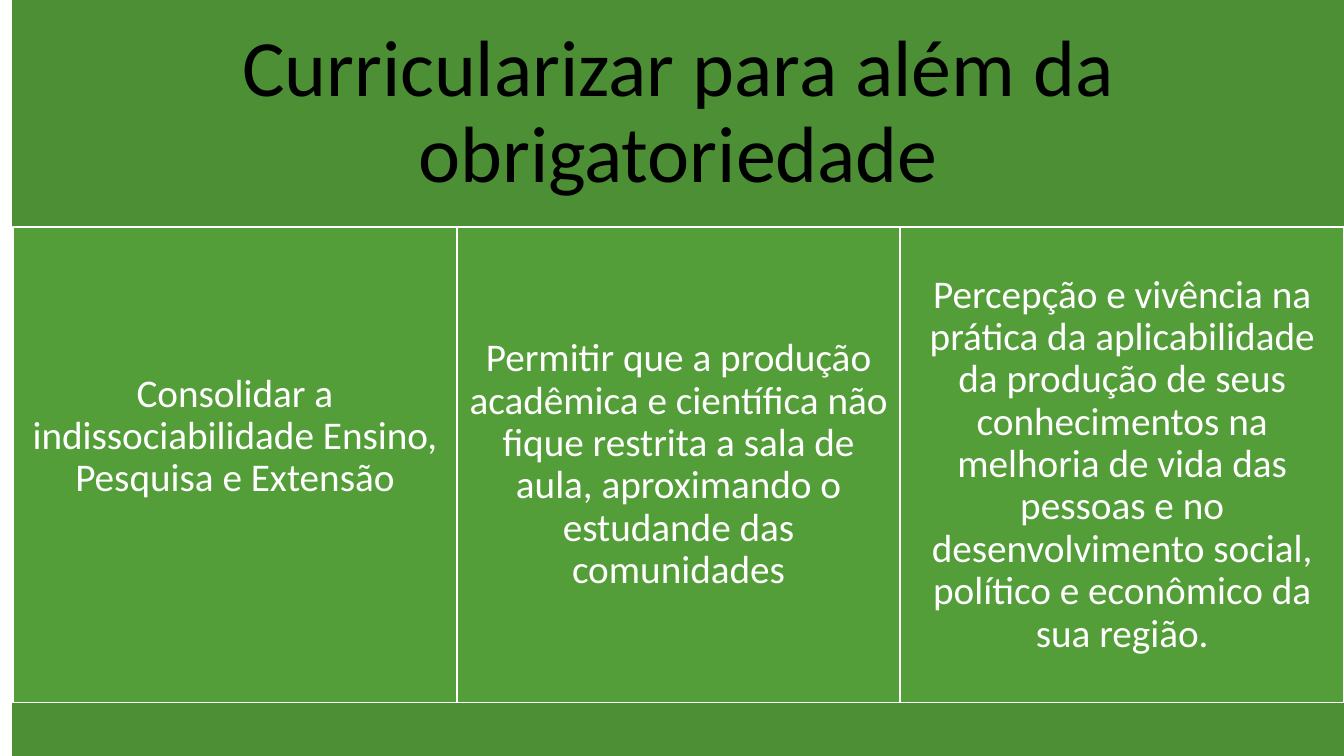
from pptx import Presentation, util as u
from pptx.dml.color import RGBColor
from pptx.enum import shapes, text

DARK_GREEN = RGBColor(0x4C, 0x8F, 0x34)
GREEN = RGBColor(0x54, 0x9E, 0x39)
WHITE = RGBColor(0xFF, 0xFF, 0xFF)
BLACK = RGBColor(0, 0, 0)

WIDTH, HEIGHT = 13.33, 7.5
LEFT = 0.12
BAND_WIDTH = WIDTH - LEFT
HEADER_HEIGHT = 0.3 * HEIGHT
COLUMN_HEIGHT = 0.63 * HEIGHT
FOOTER_TOP = HEADER_HEIGHT + COLUMN_HEIGHT

TITLE = "Curricularizar para além da obrigatoriedade"
COLUMNS = [
    ("Consolidar a indissociabilidade Ensino, Pesquisa e Extensão", 0.56),
    ("Permitir que a produção acadêmica e científica não fique restrita a sala de "
     "aula, aproximando o estudande das comunidades", 0),
    ("Percepção e vivência na prática da aplicabilidade da produção de seus "
     "conhecimentos na melhoria de vida das pessoas e no desenvolvimento social, "
     "político e econômico da sua região.", 0),
]


def write(box, words, size, color, margin, lift=0):
    """Fill a box with one centred paragraph, raised by half the lift."""
    frame = box.text_frame
    frame.word_wrap = True
    frame.auto_size = text.MSO_AUTO_SIZE.NONE
    frame.vertical_anchor = text.MSO_ANCHOR.MIDDLE
    frame.margin_left = frame.margin_right = frame.margin_top = u.Inches(margin)
    frame.margin_bottom = u.Inches(margin + lift)
    para = frame.paragraphs[0]
    para.alignment = text.PP_ALIGN.CENTER
    para.line_spacing = 0.9
    span = para.add_run()
    span.text = words
    span.font.name = "Calibri"
    span.font.size = u.Pt(size)
    span.font.color.rgb = color


def add_panel(page, left, top, width, height, fill, line=None):
    """Draw a filled rectangle, outlined when a line colour is given."""
    panel = page.shapes.add_shape(
        shapes.MSO_SHAPE.RECTANGLE, *map(u.Inches, (left, top, width, height)))
    panel.shadow.inherit = False
    panel.fill.solid()
    panel.fill.fore_color.rgb = fill
    if line is None:
        panel.line.fill.background()
    else:
        panel.line.color.rgb = line
        panel.line.width = u.Pt(1.5)
    return panel


def add_header(page, left, top, width, height):
    """Turn the title placeholder into the top band."""
    title = page.shapes.title
    title.left, title.top, title.width, title.height = map(
        u.Inches, (left, top, width, height))
    title.fill.solid()
    title.fill.fore_color.rgb = DARK_GREEN
    write(title, TITLE, 57, BLACK, 0.24)


def add_columns(page, left, top, width, height):
    """Share the box equally between the columns."""
    step = width / len(COLUMNS)
    for index, (words, lift) in enumerate(COLUMNS):
        panel = add_panel(page, left + index * step, top, step, height, GREEN, WHITE)
        write(panel, words, 28, WHITE, 0.12, lift)


def main():
    """Build and save the deck."""
    deck = Presentation()
    deck.slide_width, deck.slide_height = u.Inches(WIDTH), u.Inches(HEIGHT)
    page = deck.slides.add_slide(deck.slide_layouts[5])
    add_header(page, LEFT, 0, BAND_WIDTH, HEADER_HEIGHT)
    add_columns(page, LEFT + 0.01, HEADER_HEIGHT, BAND_WIDTH - 0.01, COLUMN_HEIGHT)
    add_panel(page, LEFT, FOOTER_TOP, BAND_WIDTH, HEIGHT - FOOTER_TOP, DARK_GREEN)
    deck.save("out.pptx")


if __name__ == "__main__":
    main()
